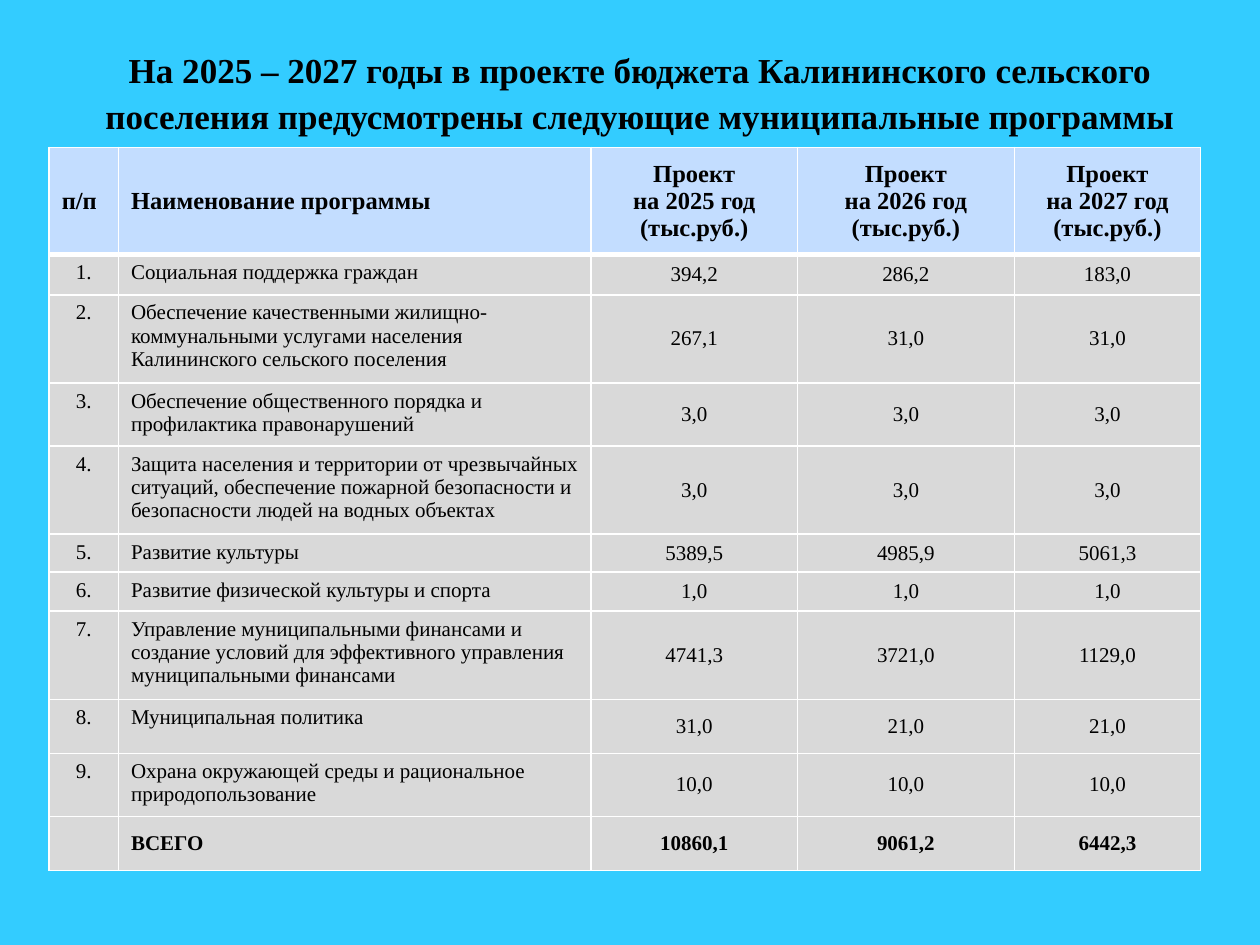
from lxml import etree
from pptx import Presentation
from pptx.dml.color import RGBColor
from pptx.enum.text import MSO_ANCHOR, MSO_AUTO_SIZE, PP_ALIGN
from pptx.oxml.ns import qn
from pptx.util import Inches, Pt

CENTER, LEFT = PP_ALIGN.CENTER, PP_ALIGN.LEFT
TOP, MIDDLE = MSO_ANCHOR.TOP, MSO_ANCHOR.MIDDLE
FONT = "Times New Roman"
COLORS = {"background": "33CCFF", "header": "C3DDFF", "body": "D9D9D9",
          "border": "FFFFFF", "text": "000000"}

TITLE = ("На 2025 – 2027 годы в проекте бюджета Калининского сельского "
         "поселения предусмотрены следующие муниципальные программы")
YEARS = (2025, 2026, 2027)
PROGRAMS = [
    ("Социальная поддержка граждан", "394,2", "286,2", "183,0"),
    ("Обеспечение качественными жилищно-коммунальными услугами населения "
     "Калининского сельского поселения", "267,1", "31,0", "31,0"),
    ("Обеспечение общественного порядка и профилактика правонарушений",
     "3,0", "3,0", "3,0"),
    ("Защита населения и территории от чрезвычайных ситуаций, обеспечение "
     "пожарной безопасности и безопасности людей на водных объектах",
     "3,0", "3,0", "3,0"),
    ("Развитие культуры", "5389,5", "4985,9", "5061,3"),
    ("Развитие физической культуры и спорта", "1,0", "1,0", "1,0"),
    ("Управление муниципальными финансами и создание условий для эффективного "
     "управления муниципальными финансами", "4741,3", "3721,0", "1129,0"),
    ("Муниципальная политика", "31,0", "21,0", "21,0"),
    ("Охрана окружающей среды и рациональное природопользование",
     "10,0", "10,0", "10,0"),
]
TOTAL = ("", "ВСЕГО", "10860,1", "9061,2", "6442,3")
COLUMN_WIDTHS = (0.55, 3.75, 1.64, 1.72, 1.48)
ROW_HEIGHTS = (0.85, 0.32, 0.7, 0.5, 0.7, 0.3, 0.31, 0.7, 0.43, 0.5, 0.43)


def write_text(text_frame, text, size, bold, alignment):
    """Write each line of text as a paragraph of its own."""
    for number, line in enumerate(text.split("\n")):
        paragraph = text_frame.paragraphs[0] if number == 0 else text_frame.add_paragraph()
        paragraph.alignment = alignment
        if not line:
            continue
        run = paragraph.add_run()
        run.text = line
        run.font.name = FONT
        run.font.size = Pt(size)
        run.font.bold = bold
        run.font.color.rgb = RGBColor.from_string(COLORS["text"])


def format_cell(cell, fill, bottom_width):
    """Draw the cell's borders, then its fill, in the order the schema asks for."""
    properties = cell._tc.get_or_add_tcPr()
    for side, width in (("L", 1), ("R", 1), ("T", 1), ("B", bottom_width)):
        line = etree.SubElement(properties, qn(f"a:ln{side}"), w=str(Pt(width)))
        solid = etree.SubElement(line, qn("a:solidFill"))
        etree.SubElement(solid, qn("a:srgbClr"), val=COLORS["border"])
    cell.fill.solid()
    cell.fill.fore_color.rgb = RGBColor.from_string(COLORS[fill])


presentation = Presentation()
presentation.slide_width, presentation.slide_height = Inches(10), Inches(7.5)
slide = presentation.slides.add_slide(presentation.slide_layouts[5])
slide.background.fill.solid()
slide.background.fill.fore_color.rgb = RGBColor.from_string(COLORS["background"])

title = slide.shapes.title
title.left, title.top = Inches(0.55), Inches(0.31)
title.width, title.height = Inches(9.06), Inches(0.77)
title_frame = title.text_frame
title_frame.word_wrap = True
title_frame.auto_size = MSO_AUTO_SIZE.NONE
title_frame.vertical_anchor = TOP
write_text(title_frame, TITLE, 20, True, CENTER)
title_frame.paragraphs[0].line_spacing = 1.08

header = ["п/п", "Наименование программы"]
header += [f"Проект\nна {year} год\n(тыс.руб.)" for year in YEARS]
body = [(f"{number}.", *program) for number, program in enumerate(PROGRAMS, 1)]
rows = [header, *body, TOTAL]

table = slide.shapes.add_table(
    len(rows), len(COLUMN_WIDTHS), Inches(0.39), Inches(1.17),
    Inches(sum(COLUMN_WIDTHS)), Inches(sum(ROW_HEIGHTS))).table
for column, width in zip(table.columns, COLUMN_WIDTHS):
    column.width = Inches(width)
for row, height in zip(table.rows, ROW_HEIGHTS):
    row.height = Inches(height)

last_row = len(rows) - 1
for row_index, values in enumerate(rows):
    is_header = row_index == 0
    is_bold = row_index in (0, last_row)
    for column_index, value in enumerate(values):
        cell = table.cell(row_index, column_index)
        is_amount = column_index >= 2
        centered = is_amount or (column_index == 0 and not is_header)
        cell.vertical_anchor = MIDDLE if is_bold or is_amount else TOP
        if is_amount and not is_header:
            cell.margin_left = cell.margin_right = Inches(0.07)
            cell.margin_top = cell.margin_bottom = 0
        write_text(cell.text_frame, value, 14 if is_header else 12, is_bold,
                   CENTER if centered else LEFT)
        format_cell(cell, "header" if is_header else "body", 3 if is_header else 1)
        if row_index == 1:
            cell._tc.tcPr.find(qn("a:lnT")).set("w", str(Pt(3)))

presentation.save("out.pptx")
